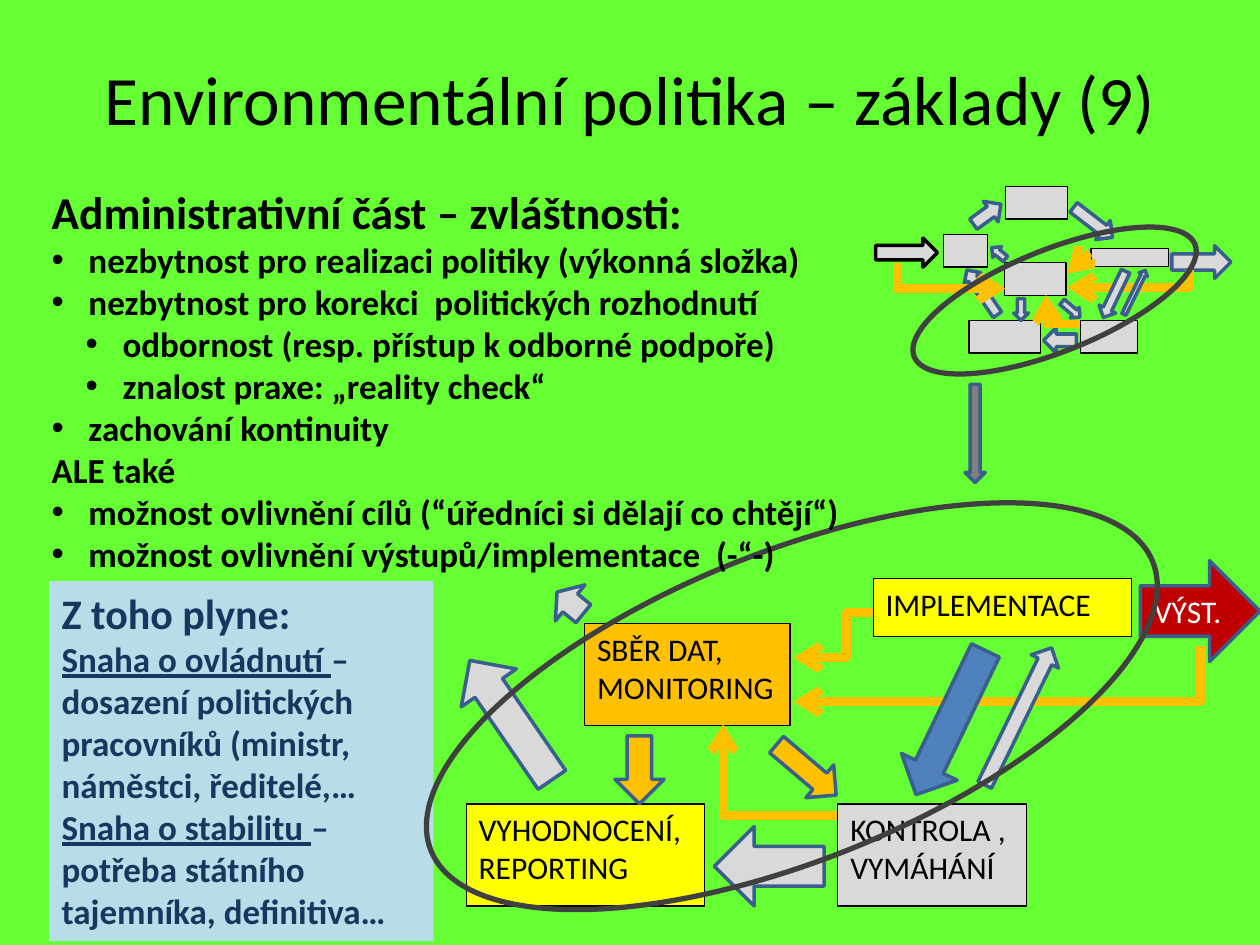
import pptx
import pptx.util
import pptx.dml.color
import pptx.enum.shapes
import pptx.enum.text
import pptx.oxml
import pptx.oxml.ns

Inches = pptx.util.Inches
Pt = pptx.util.Pt
Kind = pptx.enum.shapes.MSO_SHAPE
Align = pptx.enum.text.PP_ALIGN
Anchor = pptx.enum.text.MSO_ANCHOR
Fit = pptx.enum.text.MSO_AUTO_SIZE
qn = pptx.oxml.ns.qn

RECT, OVAL = Kind.RECTANGLE, Kind.OVAL
RIGHT, DOWN = Kind.RIGHT_ARROW, Kind.DOWN_ARROW
GREY, AMBER, YELLOW, BLACK = "D9D9D9", "FFC000", "FFFF00", "000000"
EDGE, RING, NAVY = "3A5F8C", "404040", "17375E"

# Parts of the cycle, in the coordinates of the large diagram
BOXES = [
    ((6.93, 4.59, 2.05, 0.46), YELLOW, ["IMPLEMENTACE"]),
    ((6.65, 6.38, 1.5, 0.81), GREY, ["KONTROLA , VYMÁHÁNÍ"]),
    ((3.7, 6.38, 1.89, 0.81), YELLOW, ["VYHODNOCENÍ, REPORTING"]),
    ((4.64, 4.95, 1.63, 0.81), AMBER, ["SBĚR DAT,", "MONITORING"]),
]
BACK = (RIGHT, (5.67, 6.56, 0.87, 0.63), GREY, 180)
LINKS = [  # start, end, place of the bend
    ((6.93, 4.86), (6.3, 5.22), 0.34),
    ((9.53, 5.13), (6.3, 5.57), 0),
    ((6.64, 6.47), (5.74, 5.75), 1),
]
ARROWS = [
    (RIGHT, (6.91, 5.49, 1.27, 0.49), "4F81BD", 115.7),
    (DOWN, (4.88, 5.84, 0.39, 0.54), AMBER, 0),
    (DOWN, (7.96, 5.08, 0.24, 1.21), GREY, 206),
    (DOWN, (6.23, 5.8, 0.34, 0.62), AMBER, 310.3),
]

LIST = [
    (0, "nezbytnost pro realizaci politiky (výkonná složka)"),
    (0, "nezbytnost pro korekci  politických rozhodnutí"),
    (1, "odbornost (resp. přístup k odborné podpoře)"),
    (1, "znalost praxe: „reality check“"),
    (0, "zachování kontinuity"),
    (None, "ALE také"),
    (0, "možnost ovlivnění cílů (“úředníci si dělají co chtějí“)"),
    (0, "možnost ovlivnění výstupů/implementace  (-“-)"),
]


def paint(part, color):
    part.solid()
    part.fore_color.rgb = pptx.dml.color.RGBColor.from_string(color)


def style(font, size, color, bold=False):
    font.name, font.size, font.bold = "Calibri", Pt(size), bold
    paint(font.fill, color)


def place(shape, area):
    shape.left, shape.top, shape.width, shape.height = map(Inches, area)


def add(slide, kind, area, fill=None, turn=0, line=EDGE, width=2):
    shape = slide.shapes.add_shape(kind, *map(Inches, area))
    shape.rotation = turn
    shape.shadow.inherit = False
    if fill:
        paint(shape.fill, fill)
    else:
        shape.fill.background()
    if line:
        paint(shape.line.fill, line)
        shape.line.width = Pt(width)
    else:
        shape.line.fill.background()
    return shape


def write(shape, lines, size, color, align=Align.LEFT, anchor=Anchor.TOP):
    frame = shape.text_frame
    frame.word_wrap = True
    frame.vertical_anchor = anchor
    frame.text = "\n".join(lines)
    for para in frame.paragraphs:
        para.alignment = align
        style(para.font, size, color)


def link(slide, start, end, bend):
    elbow = pptx.enum.shapes.MSO_CONNECTOR.ELBOW
    line = slide.shapes.add_connector(elbow, *map(Inches, start + end))
    paint(line.line.fill, AMBER)
    line.line.width = Pt(5)
    props = line._element.spPr
    guides = props.find(qn("a:prstGeom")).get_or_add_avLst()
    guide = pptx.oxml.ns.nsdecls("a")
    guides.append(pptx.oxml.parse_xml(
        f'<a:gd {guide} name="adj1" fmla="val {round(bend * 100000)}"/>'))
    tail = props.find(qn("a:ln")).makeelement(qn("a:tailEnd"), {"type": "arrow"})
    props.find(qn("a:ln")).append(tail)
    props.append(props.makeelement(qn("a:effectLst"), {}))
    return line


def shrink(x, y):
    """Map a point of the large cycle to the small one."""
    return 8.66 + 0.3 * (x - 6.93), 1.97 + 0.32 * (y - 4.59)


def reduce(area, turn=0):
    """Map an area; a shape turned on its side swaps its two scales."""
    left, top, wide, high = area
    x, y = shrink(left + wide / 2, top + high / 2)
    scale = (0.32, 0.3) if 45 < turn % 180 < 135 else (0.3, 0.32)
    wide, high = wide * scale[0], high * scale[1]
    return x - wide / 2, y - high / 2, wide, high


def cycle(slide, small, under, over):
    def arrow(kind, area, fill, turn):
        if small:
            area, fill = reduce(area, turn), GREY
        add(slide, kind, area, fill, turn)

    boxes = []
    for area, fill, lines in BOXES:
        if small:
            box = add(slide, RECT, reduce(area), GREY, 0, BLACK, 0.75)
        else:
            box = add(slide, RECT, area, fill, 0, BLACK, 0.75)
            write(box, lines, 18, BLACK)
        boxes.append(box)
    boxes[-1].text_frame.word_wrap = False
    arrow(*BACK)
    shapes = [add(slide, *item) for item in under]
    for start, end, bend in LINKS:
        if small:
            start, end = shrink(*start), shrink(*end)
        line = link(slide, start, end, bend)
        if small and bend == 0.34:
            line.begin_connect(boxes[0], 1)
    for item in ARROWS:
        arrow(*item)
    for item in over:
        add(slide, *item)
    return shapes


def bullet(para, level):
    para.level = level
    props = para._p.get_or_add_pPr()
    props.set("marL", str(Inches((0.23, 0.5)[level])))
    props.set("indent", str(Inches(-0.23)))
    props.append(props.makeelement(qn("a:buFont"), {"typeface": "Arial"}))
    props.append(props.makeelement(qn("a:buChar"), {"char": "•"}))


def plain(para):
    props = para._p.get_or_add_pPr()
    props.set("marL", "0")
    props.set("indent", "0")
    props.append(props.makeelement(qn("a:buNone"), {}))


def fill_list(body):
    place(body, (0.31, 1.41, 6.64, 3.23))
    frame = body.text_frame
    frame.auto_size = Fit.NONE
    head = frame.paragraphs[0]
    head.text = "Administrativní část – zvláštnosti:"
    plain(head)
    for level, text in LIST:
        para = frame.add_paragraph()
        if level is None:
            para.text = text
            plain(para)
        else:
            para.text = " " + text
            bullet(para, level)
    for para in frame.paragraphs:
        para.space_before = Pt(0)
        style(para.font, 26 if para is head else 20, BLACK, True)
    style(frame.paragraphs[0].font, 26, BLACK, True)


def add_note(slide):
    note = add(slide, RECT, (0.39, 4.61, 3.05, 2.86), "B7DEE8", line=None)
    write(note, ["Z toho plyne:", "", ""], 20, NAVY)
    paras = note.text_frame.paragraphs
    parts = [
        ("Snaha o ovládnutí ",
         "– dosazení politických pracovníků (ministr, náměstci, ředitelé,…"),
        ("Snaha o stabilitu ", "– potřeba státního tajemníka, definitiva…"),
    ]
    for para, (lead, rest) in zip(paras[1:], parts):
        run = para.add_run()
        run.text = lead
        run.font.underline = True
        para.add_run().text = rest
    for para in paras:
        para.font.bold = True
    paras[0].font.size = Pt(24)


def main():
    deck = pptx.Presentation()
    deck.slide_width, deck.slide_height = Inches(10), Inches(7.5)
    slide = deck.slides.add_slide(deck.slide_layouts[1])
    paint(slide.background.fill, "66FF33")
    title, body = slide.placeholders
    place(title, (0.5, 0.3, 9, 0.95))
    write(title, ["Environmentální politika – základy (9)"], 39.6, BLACK,
          Align.CENTER, Anchor.MIDDLE)
    add_note(slide)

    output, = cycle(
        slide, False,
        [(RIGHT, (9.05, 4.45, 0.95, 0.8), "C00000")],
        [(RIGHT, (3.48, 5.45, 1.15, 0.53), GREY, 235.5),
         (DOWN, (4.34, 4.65, 0.37, 0.27), GREY, 129.4),
         (OVAL, (3.2, 4.38, 6.17, 2.45), None, 338.2, RING, 3)])
    write(output, ["VÝST."], 18, "FFFFFF", Align.CENTER, Anchor.MIDDLE)

    cycle(
        slide, True,
        [(RECT, (7.49, 1.86, 0.35, 0.26), GREY, 0, BLACK, 0.75),
         (RECT, (7.98, 1.48, 0.49, 0.26), GREY, 0, BLACK, 0.75),
         (RIGHT, (6.95, 1.89, 0.49, 0.23), GREY, 0, BLACK),
         (RIGHT, (7.7, 1.6, 0.27, 0.2), GREY, 324.1),
         (RIGHT, (8.48, 1.67, 0.39, 0.19), GREY, 37.7),
         (RIGHT, (9.3, 1.95, 0.47, 0.26), GREY)],
        [(RIGHT, (7.58, 2.24, 0.43, 0.16), GREY, 235.5),
         (DOWN, (7.87, 1.94, 0.11, 0.14), GREY, 129.4)])
    link(slide, (7.12, 2.09), (7.98, 2.29), 0)
    add(slide, OVAL, (7.17, 1.98, 2.4, 0.81), None, 338.2, RING, 3)

    fill_list(body)
    slide.shapes._spTree.append(body._element)
    add(slide, DOWN, (7.66, 3.05, 0.16, 0.78), "808080")
    deck.save("out.pptx")


if __name__ == "__main__":
    main()
